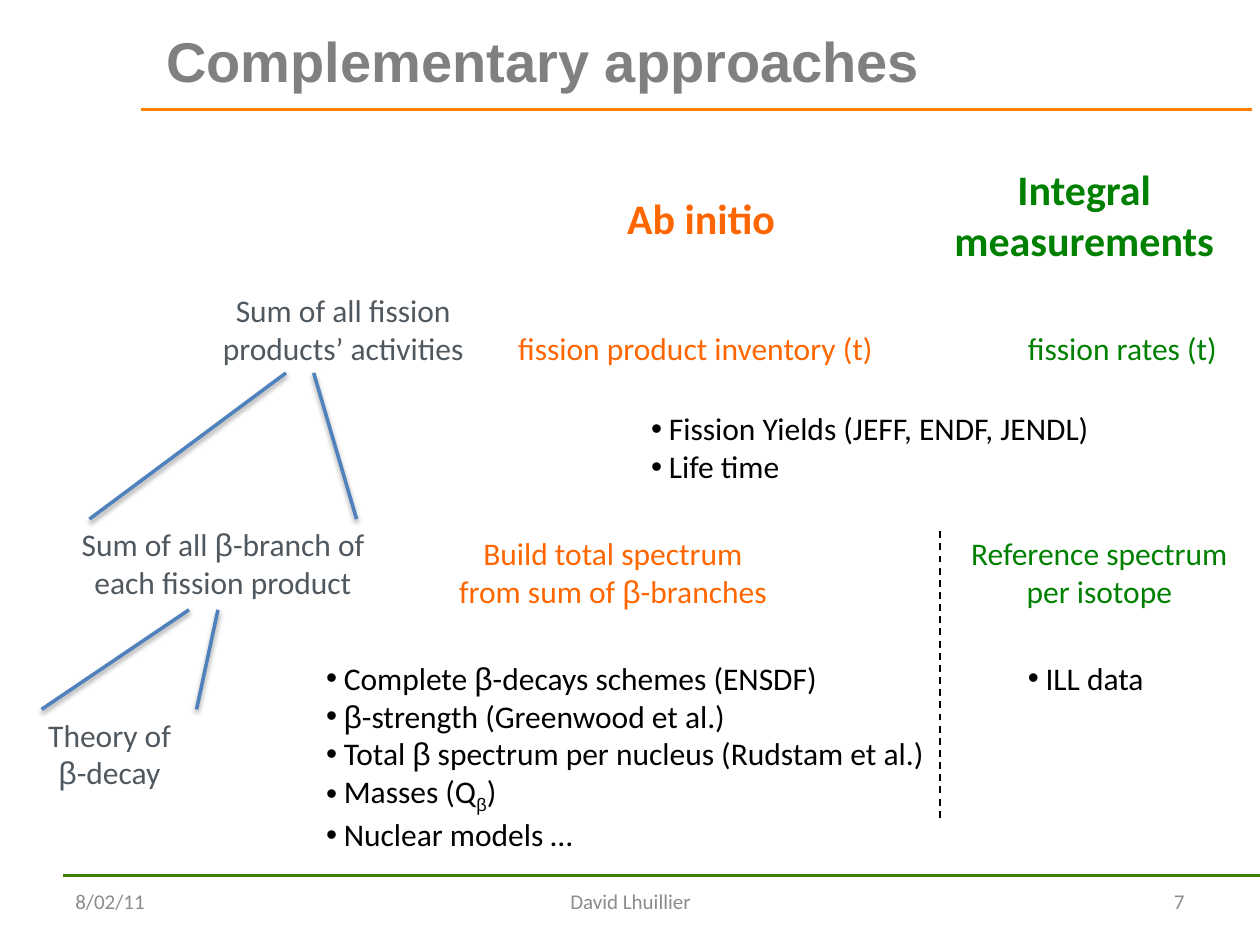
"""Build the slide that compares ab initio and integral approaches to fission spectra."""
from dataclasses import dataclass
from itertools import groupby

from lxml import etree
from pptx import Presentation
from pptx.dml.color import RGBColor
from pptx.enum.dml import MSO_LINE
from pptx.enum.shapes import MSO_CONNECTOR
from pptx.enum.text import MSO_ANCHOR, MSO_AUTO_SIZE, PP_ALIGN
from pptx.oxml import parse_xml
from pptx.oxml.ns import nsdecls, qn
from pptx.slide import Slide
from pptx.text.text import TextFrame
from pptx.util import Inches, Pt

LEFT, CENTER, RIGHT = PP_ALIGN.LEFT, PP_ALIGN.CENTER, PP_ALIGN.RIGHT
TOP, MIDDLE = MSO_ANCHOR.TOP, MSO_ANCHOR.MIDDLE
NO_AUTOFIT = MSO_AUTO_SIZE.NONE
STRAIGHT = MSO_CONNECTOR.STRAIGHT
DASH = MSO_LINE.DASH
GREEK = "β"
SUBSCRIPTS = {"ᵦ": "β"}
BULLET_INDENT = Inches(0.14)


@dataclass(frozen=True)
class Theme:
    """Colours, fonts and type sizes of the slide."""

    body_font: str = "Calibri"
    greek_font: str = "Arial"
    title_font: str = "Arial"
    title: str = "808080"
    footer: str = "8C8C8C"
    process: str = "50585F"
    ab_initio: str = "FF6600"
    integral: str = "008000"
    data: str = "000000"
    branch: str = "4F81BD"
    header_rule: str = "FF8000"
    footer_rule: str = "408000"
    title_size: int = 32
    heading_size: int = 24
    body_size: int = 18
    footer_size: int = 12


THEME = Theme()


@dataclass(frozen=True)
class Label:
    """A block of text with its place and format."""

    text: str
    box: tuple[float, float, float, float]
    color: str
    size: int = THEME.body_size
    bold: bool = False
    align: PP_ALIGN = CENTER
    anchor: MSO_ANCHOR = TOP
    wrap: bool = True
    bullets: bool = False


@dataclass(frozen=True)
class Rule:
    """A straight line between two points."""

    start: tuple[float, float]
    end: tuple[float, float]
    color: str
    width: float = 1.5
    dashed: bool = False
    shadow: bool = False


RULES = [
    Rule((0.5, 6.95), (10, 6.95), THEME.footer_rule),
    Rule((1.12, 0.87), (9.94, 0.87), THEME.header_rule),
    *(
        Rule(start, end, THEME.branch, width=2, shadow=True)
        for start, end in (
            ((2.27, 2.96), (0.71, 4.12)),
            ((2.49, 2.96), (2.83, 4.12)),
            ((1.73, 4.84), (1.56, 5.63)),
            ((1.5, 4.84), (0.33, 5.63)),
        )
    ),
    Rule((7.46, 6.49), (7.46, 4.19), THEME.data, width=1, dashed=True),
]

FOOTERS = [
    Label(text, (left, 6.95, width, 0.4), THEME.footer, THEME.footer_size,
          align=align, anchor=MIDDLE)
    for text, left, width, align in (
        ("8/02/11", 0.5, 2.33, LEFT),
        ("David Lhuillier", 3.42, 3.17, CENTER),
        ("7", 7.17, 2.33, RIGHT),
    )
]

PROCESSES = [
    Label("Sum of all fission products’ activities", (1.56, 2.26, 2.33, 0.94), THEME.process),
    Label("Sum of all β-branch of each fission product", (0.51, 4.12, 2.52, 0.94), THEME.process),
    Label("Theory of β-decay", (0.17, 5.63, 1.4, 0.7), THEME.process),
]

APPROACHES = [
    Label("Ab initio", (4.88, 1.48, 1.46, 0.5), THEME.ab_initio, THEME.heading_size,
          bold=True, align=LEFT),
    Label("Integral measurements", (7.38, 1.25, 2.45, 0.91), THEME.integral,
          THEME.heading_size, bold=True),
    Label("fission product inventory (t)", (4, 2.56, 3.04, 0.4), THEME.ab_initio, wrap=False),
    Label("fission rates (t)", (8.06, 2.56, 1.72, 0.4), THEME.integral, align=LEFT, wrap=False),
    Label("Build total spectrum from sum of β-branches", (3.5, 4.19, 2.73, 0.71),
          THEME.ab_initio),
    Label("Reference spectrum per isotope", (7.55, 4.19, 2.35, 0.71), THEME.integral),
]

DATA_SOURCES = [
    Label(text, box, THEME.data, align=LEFT, wrap=False, bullets=True)
    for text, box in (
        ("Fission Yields (JEFF, ENDF, JENDL)\nLife time", (5.07, 3.2, 3.69, 0.71)),
        ("Complete β-decays schemes (ENSDF)\n"
         "β-strength (Greenwood et al.)\n"
         "Total β spectrum per nucleus (Rudstam et al.)\n"
         "Masses (Qᵦ)\n"
         "Nuclear models …", (2.49, 5.18, 4.97, 1.62)),
        ("ILL data", (8.06, 5.18, 1.13, 0.4)),
    )
]


def write_text(frame: TextFrame, text: str, *, color: str, size: int, font: str,
               bold: bool = False, align: PP_ALIGN = LEFT, anchor: MSO_ANCHOR = TOP,
               wrap: bool = True, bullets: bool = False) -> None:
    """Fill a text frame, setting Greek letters in their own font."""
    frame.word_wrap = wrap
    frame.auto_size = NO_AUTOFIT
    frame.vertical_anchor = anchor
    for index, line in enumerate(text.split("\n")):
        paragraph = frame.add_paragraph() if index else frame.paragraphs[0]
        paragraph.alignment = align
        if bullets:
            properties = paragraph._p.get_or_add_pPr()
            properties.set("marL", str(BULLET_INDENT))
            properties.set("indent", str(-BULLET_INDENT))
            etree.SubElement(properties, qn("a:buFont")).set("typeface", THEME.greek_font)
            etree.SubElement(properties, qn("a:buChar")).set("char", "•")
        for (greek, lowered), letters in groupby(
                line, key=lambda letter: (letter in GREEK, letter in SUBSCRIPTS)):
            run = paragraph.add_run()
            run.text = "".join(SUBSCRIPTS.get(letter, letter) for letter in letters)
            run.font.name = THEME.greek_font if greek or lowered else font
            run.font.size = Pt(size)
            run.font.bold = bold
            run.font.color.rgb = RGBColor.from_string(color)
            if lowered:
                run.font._element.set("baseline", "-25000")


def draw_label(slide: Slide, label: Label) -> None:
    """Place a label in a text box."""
    frame = slide.shapes.add_textbox(*map(Inches, label.box)).text_frame
    write_text(frame, label.text, color=label.color, size=label.size, font=THEME.body_font,
               bold=label.bold, align=label.align, anchor=label.anchor, wrap=label.wrap,
               bullets=label.bullets)


def draw_rule(slide: Slide, rule: Rule) -> None:
    """Draw a line, with a soft shadow where asked."""
    connector = slide.shapes.add_connector(STRAIGHT, *map(Inches, (*rule.start, *rule.end)))
    connector.line.color.rgb = RGBColor.from_string(rule.color)
    connector.line.width = Pt(rule.width)
    if rule.dashed:
        connector.line.dash_style = DASH
    shadow = (
        f'<a:outerShdw blurRad="{Pt(3.1)}" dist="{Pt(1.6)}" dir="5400000" rotWithShape="0">'
        '<a:srgbClr val="000000"><a:alpha val="38000"/></a:srgbClr></a:outerShdw>'
    ) if rule.shadow else ""
    connector._element.spPr.append(
        parse_xml(f'<a:effectLst {nsdecls("a")}>{shadow}</a:effectLst>'))


def main() -> None:
    """Build and save the slide."""
    deck = Presentation()
    deck.slide_width, deck.slide_height = Inches(10), Inches(7.5)
    slide = deck.slides.add_slide(deck.slide_layouts[5])
    title = slide.shapes.title
    title.left, title.top, title.width, title.height = map(Inches, (1.22, 0.18, 8.28, 0.6))
    write_text(title.text_frame, "Complementary approaches", color=THEME.title,
               size=THEME.title_size, font=THEME.title_font, bold=True, anchor=MIDDLE)
    for rule in RULES:
        draw_rule(slide, rule)
    for label in FOOTERS + PROCESSES + APPROACHES + DATA_SOURCES:
        draw_label(slide, label)
    deck.save("out.pptx")


if __name__ == "__main__":
    main()
